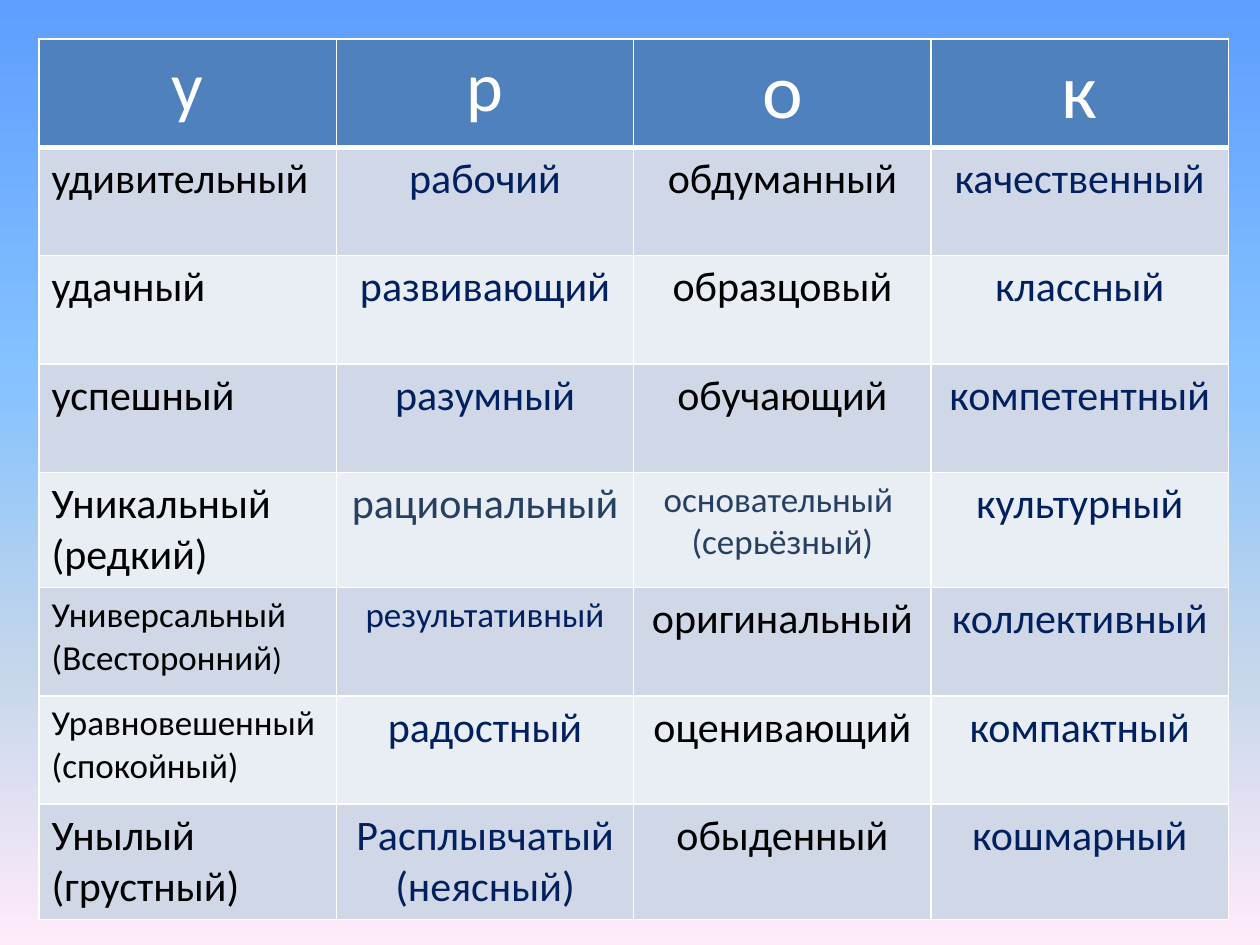
"""Build a slide with a table of adjectives for each letter of the word «урок»."""
import pptx
import pptx.util
import pptx.dml.color
import pptx.enum.text
import pptx.oxml
import pptx.oxml.ns

Inches, Pt = pptx.util.Inches, pptx.util.Pt

COLORS = {
    "header": "4F81BD", "odd": "D0D8E8", "even": "E9EDF4", "white": "FFFFFF",
    "black": "000000", "navy": "002060", "slate": "254061",
}
BACKGROUND = [(0, "5E9EFF"), (40, "85C2FF"), (70, "C4D6EB"), (100, "FFEBFA")]
ROWS = [
    ["у", "р", "о", "к"],
    ["удивительный", "рабочий", "обдуманный", "качественный"],
    ["удачный", "развивающий", "образцовый", "классный"],
    ["успешный", "разумный", "обучающий", "компетентный"],
    ["Уникальный\n(редкий)", "рациональный", "основательный \n(серьёзный)", "культурный"],
    ["Универсальный\n(Всесторонний", "результативный", "оригинальный", "коллективный"],
    ["Уравновешенный\n(спокойный)", "радостный", "оценивающий", "компактный"],
    ["Унылый\n(грустный)", "Расплывчатый\n(неясный)", "обыденный", "кошмарный"],
]
ROW_HEIGHTS = [0.86, 0.86, 0.86, 0.86, 0.9, 0.86, 0.86, 0.9]
COLUMN_COLORS = ["black", "navy", "black", "navy"]
SLATE_CELLS = {(4, 1), (4, 2)}
SIZES = {(0, 0): 40, (0, 1): 40, (0, 2): 44, (0, 3): 44,
         (4, 2): 20, (5, 0): 20, (5, 1): 20, (6, 0): 20}


class Deck:
    """Hold the style and the current slide."""

    def __init__(self, prs, font="Calibri"):
        self.font = font
        self.slide = prs.slides.add_slide(prs.slide_layouts[6])

    def rgb(self, name):
        return pptx.dml.color.RGBColor.from_string(COLORS[name])

    def background(self, stops):
        fill = self.slide.background.fill
        fill.gradient()
        fill.gradient_angle = 270
        gs_lst = self.slide.background._cSld.find(".//" + pptx.oxml.ns.qn("a:gsLst"))
        for gs in list(gs_lst):
            gs_lst.remove(gs)
        for pos, color in stops:
            gs_lst.append(pptx.oxml.parse_xml(
                f'<a:gs {pptx.oxml.ns.nsdecls("a")} pos="{pos * 1000}">'
                f'<a:srgbClr val="{color}"/></a:gs>'))

    def borders(self, cell, bottom):
        tc_pr = cell._tc.get_or_add_tcPr()
        widths = {"L": 1, "R": 1, "T": 1, "B": bottom}
        for i, (side, width) in enumerate(widths.items()):
            tc_pr.insert(i, pptx.oxml.parse_xml(
                f'<a:ln{side} {pptx.oxml.ns.nsdecls("a")} w="{Pt(width)}"><a:solidFill>'
                f'<a:srgbClr val="{COLORS["white"]}"/></a:solidFill></a:ln{side}>'))

    def cell(self, cell, text, size, color, fill, centered, bottom):
        cell.text = text
        cell.fill.solid()
        cell.fill.fore_color.rgb = self.rgb(fill)
        self.borders(cell, bottom)
        align = pptx.enum.text.PP_ALIGN
        for p in cell.text_frame.paragraphs:
            p.alignment = align.CENTER if centered else align.LEFT
            p.font.name = self.font
            p.font.size = Pt(size)
            p.font.bold = False
            p.font.color.rgb = self.rgb(color)

    def table(self, left, top, col_width, heights, rows):
        n_cols = len(rows[0])
        table = self.slide.shapes.add_table(
            len(rows), n_cols, Inches(left), Inches(top),
            Inches(col_width * n_cols), Inches(sum(heights))).table
        for column in table.columns:
            column.width = Inches(col_width)
        for r, texts in enumerate(rows):
            table.rows[r].height = Inches(heights[r])
            header = r == 0
            fill = "header" if header else "odd" if r % 2 else "even"
            for c, text in enumerate(texts):
                color = "slate" if (r, c) in SLATE_CELLS else COLUMN_COLORS[c]
                self.cell(table.cell(r, c), text, SIZES.get((r, c), 24),
                          "white" if header else color, fill,
                          header or c > 0, 3 if header else 1)
        return table


def main():
    prs = pptx.Presentation()
    prs.slide_width, prs.slide_height = Inches(10), Inches(7.5)
    deck = Deck(prs)
    deck.background(BACKGROUND)
    table = deck.table(0.31, 0.31, 2.36, ROW_HEIGHTS, ROWS)
    r = table.cell(5, 0).text_frame.paragraphs[1].add_run()
    r.text = ")"
    r.font.size = Pt(18)
    prs.save("out.pptx")


if __name__ == "__main__":
    main()
